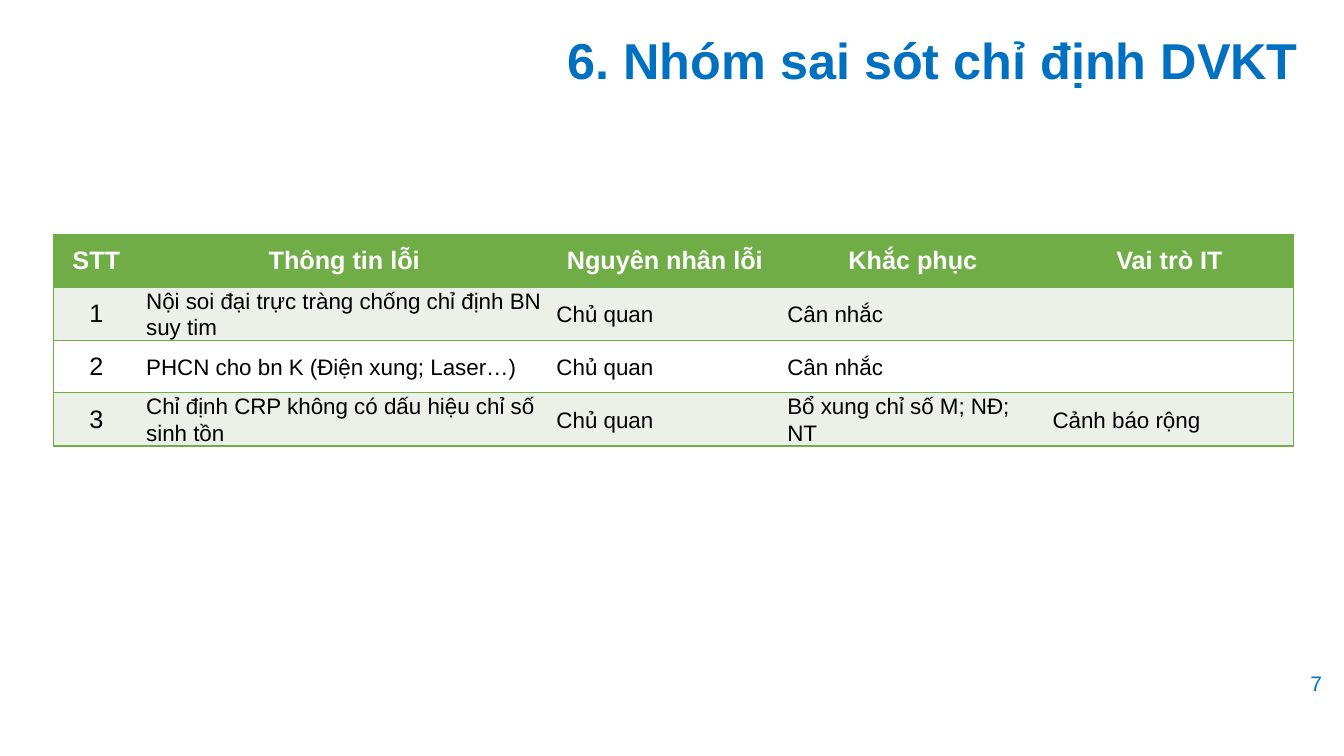
from dataclasses import dataclass

import pptx
import pptx.dml.color
import pptx.enum.text
import pptx.oxml
import pptx.oxml.ns
import pptx.util
from pptx.enum.text import MSO_ANCHOR, PP_ALIGN
from pptx.util import Inches

FONT = "Arial"
BLUE, GREEN, PALE, WHITE, BLACK = "0070C0", "70AD47", "EBF1E9", "FFFFFF", "000000"
ROW_HEIGHT = 0.52


@dataclass
class Column:
    heading: str
    width: float


@dataclass
class ErrorRow:
    information: str
    cause: str
    remedy: str
    it_role: str = ""


COLUMNS = [
    Column("STT", 0.85),
    Column("Thông tin lỗi", 4.07),
    Column("Nguyên nhân lỗi", 2.29),
    Column("Khắc phục", 2.63),
    Column("Vai trò IT", 2.46),
]
ERRORS = [
    ErrorRow("Nội soi đại trực tràng chống chỉ định BN suy tim", "Chủ quan", "Cân nhắc"),
    ErrorRow("PHCN cho bn K (Điện xung; Laser…)", "Chủ quan", "Cân nhắc"),
    ErrorRow("Chỉ định CRP không có dấu hiệu chỉ số sinh tồn", "Chủ quan",
             "Bổ xung chỉ số M; NĐ; NT", "Cảnh báo rộng"),
]


def colour(value: str) -> pptx.dml.color.RGBColor:
    return pptx.dml.color.RGBColor.from_string(value)


def write(frame, text: str, size: float, ink: str, align: PP_ALIGN,
          bold: bool = False, spacing: float = 1.0) -> None:
    para = frame.paragraphs[0]
    para.text = text
    para.alignment = align
    para.line_spacing = spacing
    para.font.name = FONT
    para.font.size = pptx.util.Pt(size)
    para.font.bold = bold
    para.font.color.rgb = colour(ink)


def set_borders(cell, sides: str) -> None:
    """Draw green lines on the given sides and clear the others."""
    properties = cell._tc.get_or_add_tcPr()
    for side in "LRTB":
        paint = (f'<a:solidFill><a:srgbClr val="{GREEN}"/></a:solidFill>'
                 if side in sides else "<a:noFill/>")
        properties.append(pptx.oxml.parse_xml(
            f'<a:ln{side} {pptx.oxml.ns.nsdecls("a")} w="{pptx.util.Pt(1)}">'
            f"{paint}</a:ln{side}>"))


def format_cell(cell, text: str, row: int, column: int) -> None:
    sides = "TB"
    if column == 0:
        sides += "L"
    if column == len(COLUMNS) - 1:
        sides += "R"
    set_borders(cell, sides)
    cell.fill.solid()
    cell.fill.fore_color.rgb = colour(GREEN if row == 0 else PALE if row % 2 else WHITE)
    cell.vertical_anchor = MSO_ANCHOR.MIDDLE
    if row == 0:
        write(cell.text_frame, text, 18, WHITE, PP_ALIGN.CENTER, bold=True)
    elif column == 0:
        write(cell.text_frame, text, 18, BLACK, PP_ALIGN.CENTER)
    else:
        cell.margin_left = cell.margin_right = Inches(0.07)
        cell.margin_top = cell.margin_bottom = 0
        write(cell.text_frame, text, 16, BLACK, PP_ALIGN.LEFT, spacing=1.07)


def add_error_table(page) -> None:
    rows = [[column.heading for column in COLUMNS]]
    for number, error in enumerate(ERRORS, start=1):
        rows.append([str(number), error.information, error.cause, error.remedy, error.it_role])
    width = sum(column.width for column in COLUMNS)
    table = page.shapes.add_table(
        len(rows), len(COLUMNS), Inches(0.53), Inches(2.33),
        Inches(width), Inches(ROW_HEIGHT * len(rows))).table
    for index, column in enumerate(COLUMNS):
        table.columns[index].width = Inches(column.width)
    for row, texts in enumerate(rows):
        table.rows[row].height = Inches(ROW_HEIGHT)
        for column, text in enumerate(texts):
            format_cell(table.cell(row, column), text, row, column)


def main() -> None:
    deck = pptx.Presentation()
    deck.slide_width, deck.slide_height = Inches(13.33), Inches(7.5)
    page = deck.slides.add_slide(deck.slide_layouts[5])

    # Title
    title = page.shapes.title
    title.left, title.top = Inches(2.66), Inches(0.19)
    title.width, title.height = Inches(10.32), Inches(0.88)
    title.text_frame.vertical_anchor = MSO_ANCHOR.MIDDLE
    write(title.text_frame, "6. Nhóm sai sót chỉ định DVKT", 36, BLUE,
          PP_ALIGN.RIGHT, bold=True, spacing=0.9)

    # Error table
    add_error_table(page)

    # Page number
    box = page.shapes.add_textbox(Inches(12.78), Inches(6.58), Inches(0.55), Inches(0.39))
    box.text_frame.word_wrap = True
    box.text_frame.vertical_anchor = MSO_ANCHOR.MIDDLE
    write(box.text_frame, "7", 15, BLUE, PP_ALIGN.CENTER)

    deck.save("out.pptx")


if __name__ == "__main__":
    main()
